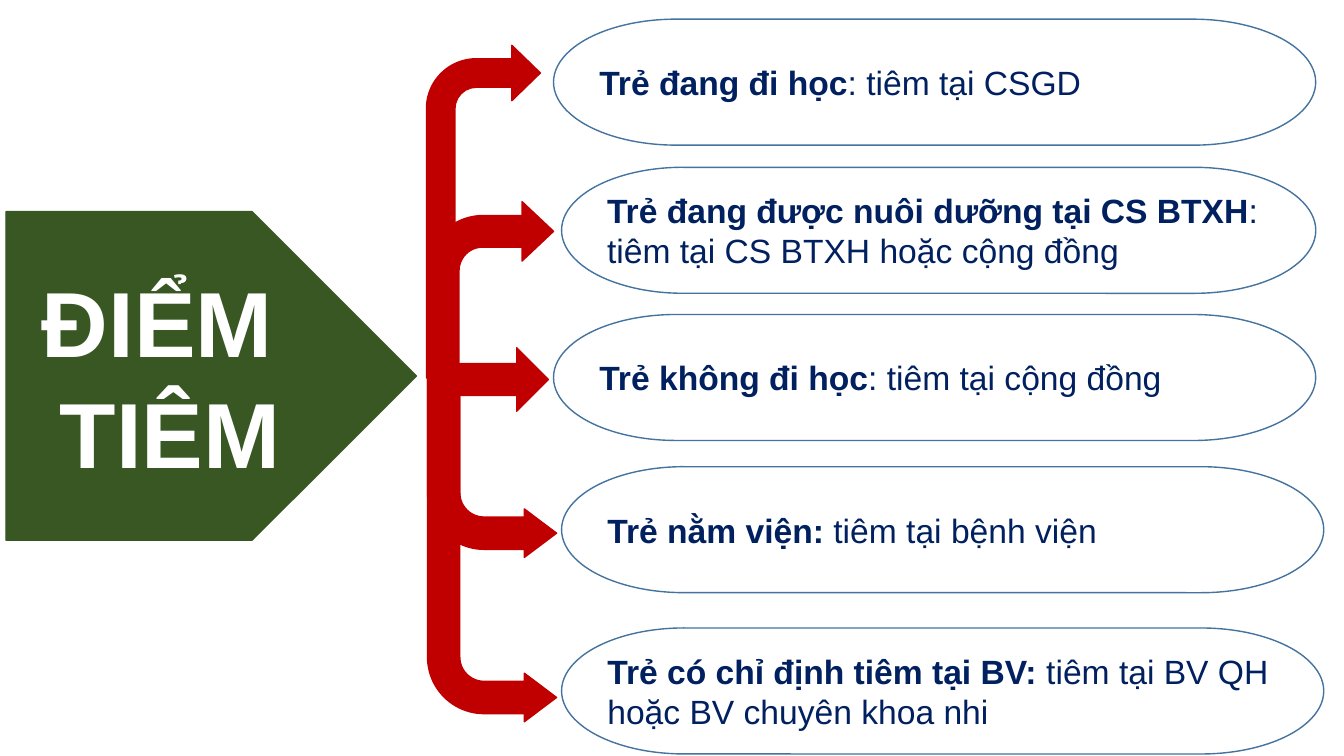
"""Build the slide on vaccination sites for each group of children."""
import pptx
import pptx.dml.color
import pptx.enum.shapes
import pptx.enum.text
import pptx.util

Inches = pptx.util.Inches
SHAPES = pptx.enum.shapes.MSO_SHAPE
ALIGN = pptx.enum.text.PP_ALIGN
NAVY = pptx.dml.color.RGBColor(0x00, 0x20, 0x60)
BLUE = pptx.dml.color.RGBColor(0x43, 0x73, 0x9E)
RED = pptx.dml.color.RGBColor(0xC0, 0x00, 0x00)
GREEN = pptx.dml.color.RGBColor(0x38, 0x57, 0x23)
WHITE = pptx.dml.color.RGBColor(0xFF, 0xFF, 0xFF)

deck = pptx.Presentation()
deck.slide_width = Inches(13.33)
deck.slide_height = Inches(7.5)
slide = deck.slides.add_slide(deck.slide_layouts[6])


def add_part(kind, left, top, width, height, line, fill=None):
    part = slide.shapes.add_shape(
        kind, Inches(left), Inches(top), Inches(width), Inches(height))
    part.shadow.inherit = False
    part.line.color.rgb = line
    part.line.width = pptx.util.Pt(1)
    if fill is None:
        part.fill.background()
    else:
        part.fill.solid()
        part.fill.fore_color.rgb = fill
    return part


def style_paragraph(paragraph, size, color, alignment):
    paragraph.alignment = alignment
    paragraph.font.name = "Arial"
    paragraph.font.size = pptx.util.Pt(size)
    paragraph.font.color.rgb = color


sites = [
    (5.49, 0.19, 7.56, "Trẻ đang đi học", ": tiêm tại CSGD"),
    (5.57, 1.66, 7.48, "Trẻ đang được nuôi dưỡng tại CS BTXH",
     ": tiêm tại CS BTXH hoặc cộng đồng"),
    (5.49, 3.12, 7.56, "Trẻ không đi học", ": tiêm tại cộng đồng"),
    (5.57, 4.63, 7.56, "Trẻ nằm viện: ", "tiêm tại bệnh viện"),
    (5.57, 6.23, 7.56, "Trẻ có chỉ định tiêm tại BV: ",
     "tiêm tại BV QH hoặc BV chuyên khoa nhi"),
]
for left, top, width, group, place in sites:
    site = add_part(SHAPES.FLOWCHART_TERMINATOR, left, top, width, 1.25, BLUE)
    sentence = site.text_frame.paragraphs[0]
    style_paragraph(sentence, 24, NAVY, ALIGN.LEFT)
    for wording, bold in ((group, True), (place, False)):
        run = sentence.add_run()
        run.text = wording
        run.font.bold = bold

add_part(SHAPES.RIGHT_ARROW, 4.27, 3.45, 1.17, 0.63, RED, RED)

branches = [
    (4.23, 0.45, 1.13, 3.3, 0.243, False),
    (4.24, 2, 1.25, 1.75, 0.236, False),
    (4.24, 3.75, 1.28, 3.41, 0.188, True),
    (4.24, 3.75, 1.28, 1.78, 0.188, True),
]
for left, top, width, height, head, downward in branches:
    branch = add_part(SHAPES.BENT_ARROW, left, top, width, height, RED, RED)
    for index, ratio in enumerate((0.25, head, 0.25, 0.438)):
        branch.adjustments[index] = ratio
    if downward:
        branch.rotation = 180
        branch._element.spPr.xfrm.set("flipH", "1")

topic = add_part(SHAPES.PENTAGON, 0.06, 2.1, 4.07, 3.26, GREEN, GREEN)
topic.text_frame.text = "ĐIỂM \nTIÊM"
for word in topic.text_frame.paragraphs:
    style_paragraph(word, 66, WHITE, ALIGN.CENTER)
    word.font.bold = True

deck.save("out.pptx")
